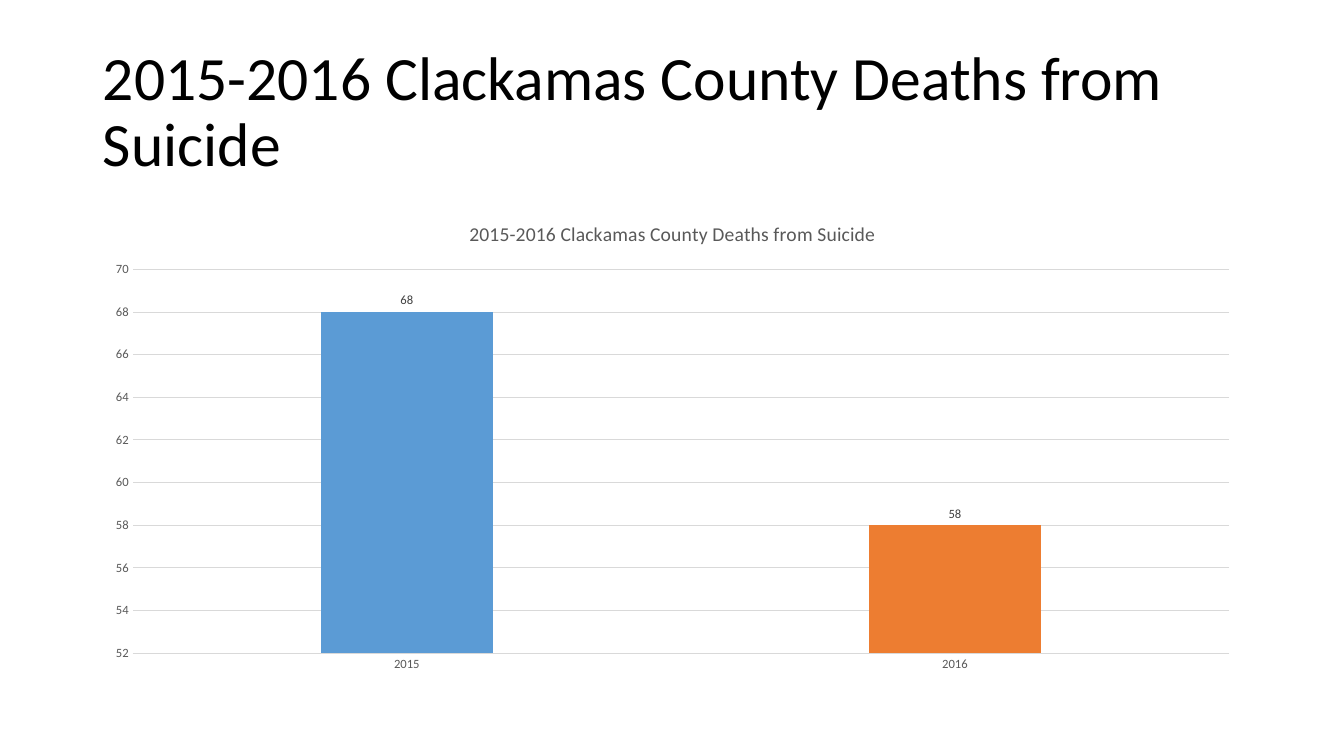
from dataclasses import dataclass

from pptx import Presentation
from pptx.chart.data import CategoryChartData
from pptx.dml.color import RGBColor as RGB
from pptx.enum.chart import XL_CHART_TYPE as ChartType
from pptx.enum.chart import XL_LABEL_POSITION as LabelPos
from pptx.enum.chart import XL_TICK_MARK as Tick
from pptx.enum.text import MSO_ANCHOR, MSO_AUTO_SIZE, PP_ALIGN
from pptx.util import Inches, Pt


@dataclass(frozen=True)
class Theme:
    font: str = "Calibri"
    black: str = "000000"
    gray: str = "595959"
    label: str = "404040"
    grid: str = "D9D9D9"
    bars: tuple = ("5B9BD5", "ED7D31")
    title_size: float = 44
    chart_title_size: float = 14
    chart_size: float = 10
    small_size: float = 9
    line_width: float = 0.75


THEME = Theme()
HEADING = "2015-2016 Clackamas County Deaths from Suicide"
DEATHS = {"2015": 68, "2016": 58}


def style_font(font, size, color):
    font.name = THEME.font
    font.size = Pt(size)
    font.bold = False
    font.color.rgb = RGB.from_string(color)


def style_line(line):
    line.color.rgb = RGB.from_string(THEME.grid)
    line.width = Pt(THEME.line_width)


def fill_solid(fill, color):
    fill.solid()
    fill.fore_color.rgb = RGB.from_string(color)


def add_title(slide, left, top, width, height):
    sp = slide.shapes.title
    sp.left, sp.top, sp.width, sp.height = map(Inches, (left, top, width, height))
    tf = sp.text_frame
    tf.text = HEADING
    tf.word_wrap = True
    tf.auto_size = MSO_AUTO_SIZE.NONE
    tf.vertical_anchor = MSO_ANCHOR.MIDDLE
    p = tf.paragraphs[0]
    p.alignment = PP_ALIGN.LEFT
    p.line_spacing = 0.9
    style_font(p.font, THEME.title_size, THEME.black)


def style_axes(chart):
    for axis in (chart.category_axis, chart.value_axis):
        axis.major_tick_mark = axis.minor_tick_mark = Tick.NONE
        style_font(axis.tick_labels.font, THEME.small_size, THEME.gray)
    style_line(chart.category_axis.format.line)
    value_axis = chart.value_axis
    value_axis.minimum_scale, value_axis.maximum_scale = 52, 70
    value_axis.major_unit = 2
    value_axis.format.line.fill.background()
    style_line(value_axis.major_gridlines.format.line)


def add_deaths_chart(slide, left, top, width, height):
    data = CategoryChartData()
    data.categories = list(DEATHS)
    data.add_series("Series 1", list(DEATHS.values()))
    box = map(Inches, (left, top, width, height))
    chart = slide.shapes.add_chart(ChartType.COLUMN_CLUSTERED, *box, data).chart
    style_font(chart.font, THEME.chart_size, THEME.black)
    chart.has_legend = False
    tf = chart.chart_title.text_frame
    tf.text = HEADING
    style_font(tf.paragraphs[0].font, THEME.chart_title_size, THEME.gray)
    chart.chart_title.include_in_layout = False
    style_axes(chart)

    plot = chart.plots[0]
    plot.gap_width, plot.overlap = 219, -27
    plot.vary_by_categories = False
    series = plot.series[0]
    series.invert_if_negative = False
    fill_solid(series.format.fill, THEME.bars[0])
    fill_solid(series.points[1].format.fill, THEME.bars[1])
    labels = series.data_labels
    labels.show_value = True
    labels.position = LabelPos.OUTSIDE_END
    style_font(labels.font, THEME.small_size, THEME.label)


def main():
    prs = Presentation()
    prs.slide_width, prs.slide_height = Inches(13.33), Inches(7.5)
    slide = prs.slides.add_slide(prs.slide_layouts[5])
    left, width = 0.92, 11.5
    add_title(slide, left, 0.4, width, 1.45)
    add_deaths_chart(slide, left, 2, width, 4.76)
    prs.save("out.pptx")


if __name__ == "__main__":
    main()
